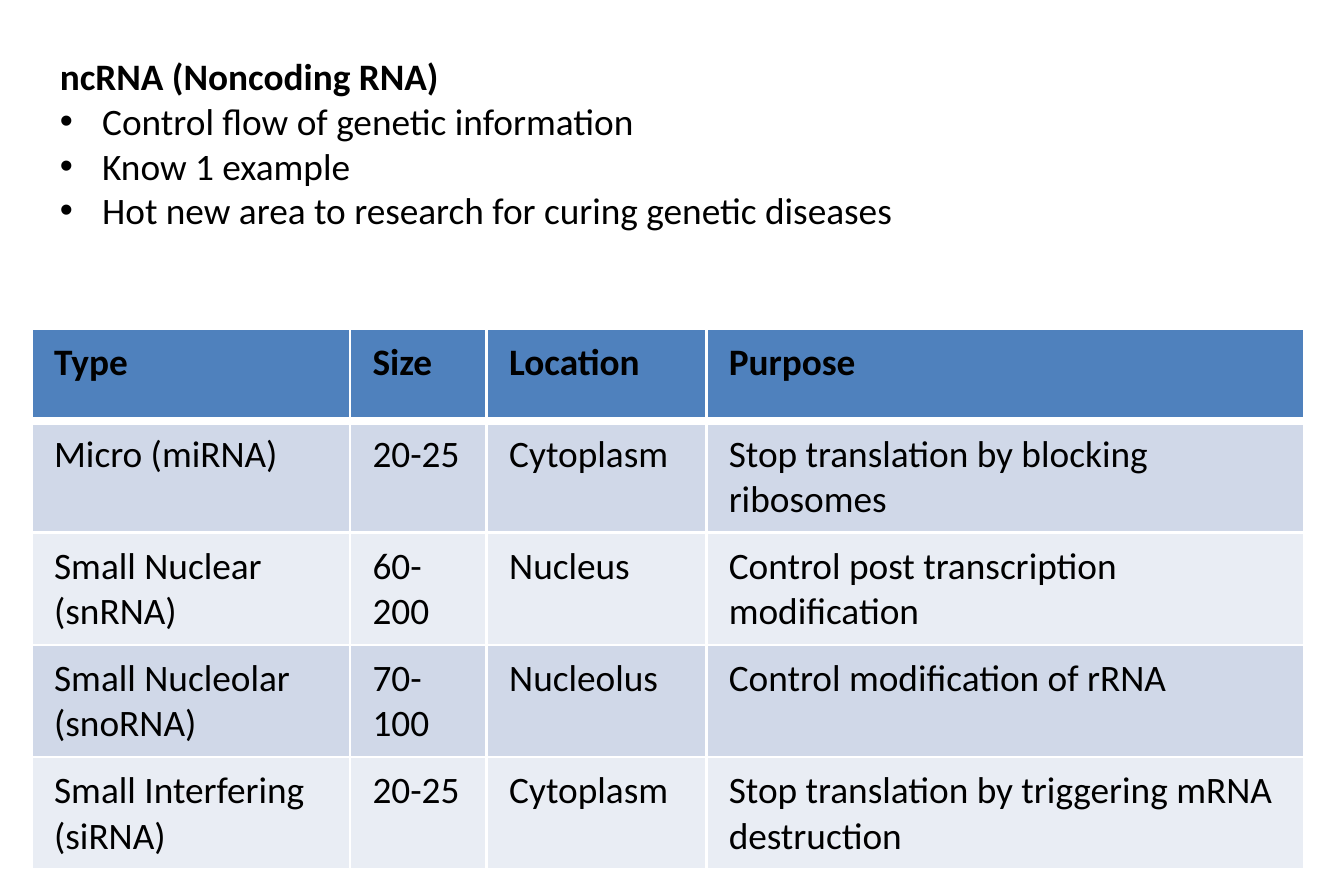
import pptx
import pptx.util
import pptx.dml.color
import pptx.oxml
import pptx.oxml.ns
from pptx.util import Cm

BLACK = pptx.dml.color.RGBColor(0x00, 0x00, 0x00)
WHITE = pptx.dml.color.RGBColor(0xFF, 0xFF, 0xFF)
HEADER = pptx.dml.color.RGBColor(0x4F, 0x81, 0xBD)
BANDS = [
    pptx.dml.color.RGBColor(0xE9, 0xED, 0xF4),
    pptx.dml.color.RGBColor(0xD0, 0xD8, 0xE8),
]
FONT = {"name": "Calibri", "size": pptx.util.Pt(12)}
INDENT = Cm(0.48)


def write(p, text, bold):
    r = p.add_run()
    r.text = text
    for key, value in {**FONT, "bold": bold}.items():
        setattr(r.font, key, value)
    r.font.color.rgb = BLACK


def add_border(tcPr, side, width):
    ns = pptx.oxml.ns.nsdecls("a")
    tcPr.append(pptx.oxml.parse_xml(
        f'<a:ln{side} {ns} w="{pptx.util.Pt(width)}"><a:solidFill>'
        f'<a:srgbClr val="{WHITE}"/></a:solidFill></a:ln{side}>'
    ))


prs = pptx.Presentation()
prs.slide_width = Cm(15.24)
prs.slide_height = Cm(10.16)
s = prs.slides.add_slide(prs.slide_layouts[6])

lines = [
    "ncRNA (Noncoding RNA)",
    "Control flow of genetic information",
    "Know 1 example",
    "Hot new area to research for curing genetic diseases",
]
sp = s.shapes.add_textbox(Cm(0.43), Cm(0.48), Cm(13.97), Cm(2.31))
tf = sp.text_frame
tf.word_wrap = True
for i, line in enumerate(lines):
    p = tf.add_paragraph() if i else tf.paragraphs[0]
    write(p, line, i == 0)
    if i:
        pPr = p._p.get_or_add_pPr()
        pPr.set("marL", str(INDENT))
        pPr.set("indent", str(-INDENT))
        ns = pptx.oxml.ns.nsdecls("a")
        pPr.append(pptx.oxml.parse_xml(f'<a:buFont {ns} typeface="Arial"/>'))
        pPr.append(pptx.oxml.parse_xml(f'<a:buChar {ns} char="•"/>'))

rows = [
    ["Type", "Size", "Location", "Purpose"],
    ["Micro (miRNA)", "20-25", "Cytoplasm", "Stop translation by blocking ribosomes"],
    ["Small Nuclear (snRNA)", "60-200", "Nucleus", "Control post transcription modification"],
    ["Small Nucleolar\n(snoRNA)", "70-100", "Nucleolus", "Control modification of rRNA"],
    ["Small Interfering (siRNA)", "20-25", "Cytoplasm", "Stop translation by triggering mRNA destruction"],
]
widths = [3.61, 1.55, 2.49, 6.78]
heights = [1.04] + [1.27] * 4

table = s.shapes.add_table(
    len(rows), len(widths), Cm(0.36), Cm(3.73), Cm(sum(widths)), Cm(sum(heights))
).table
for column, width in zip(table.columns, widths):
    column.width = Cm(width)
for row, height in zip(table.rows, heights):
    row.height = Cm(height)

for i, row in enumerate(rows):
    borders = {"L": 1, "R": 1, "T": 3 if i == 1 else 1, "B": 3 if i == 0 else 1}
    for j, text in enumerate(row):
        cell = table.cell(i, j)
        tcPr = cell._tc.get_or_add_tcPr()
        for side, width in borders.items():
            add_border(tcPr, side, width)
        cell.fill.solid()
        cell.fill.fore_color.rgb = BANDS[i % 2] if i else HEADER
        tf = cell.text_frame
        for k, line in enumerate(text.split("\n")):
            p = tf.add_paragraph() if k else tf.paragraphs[0]
            write(p, line, i == 0)

prs.save("out.pptx")
